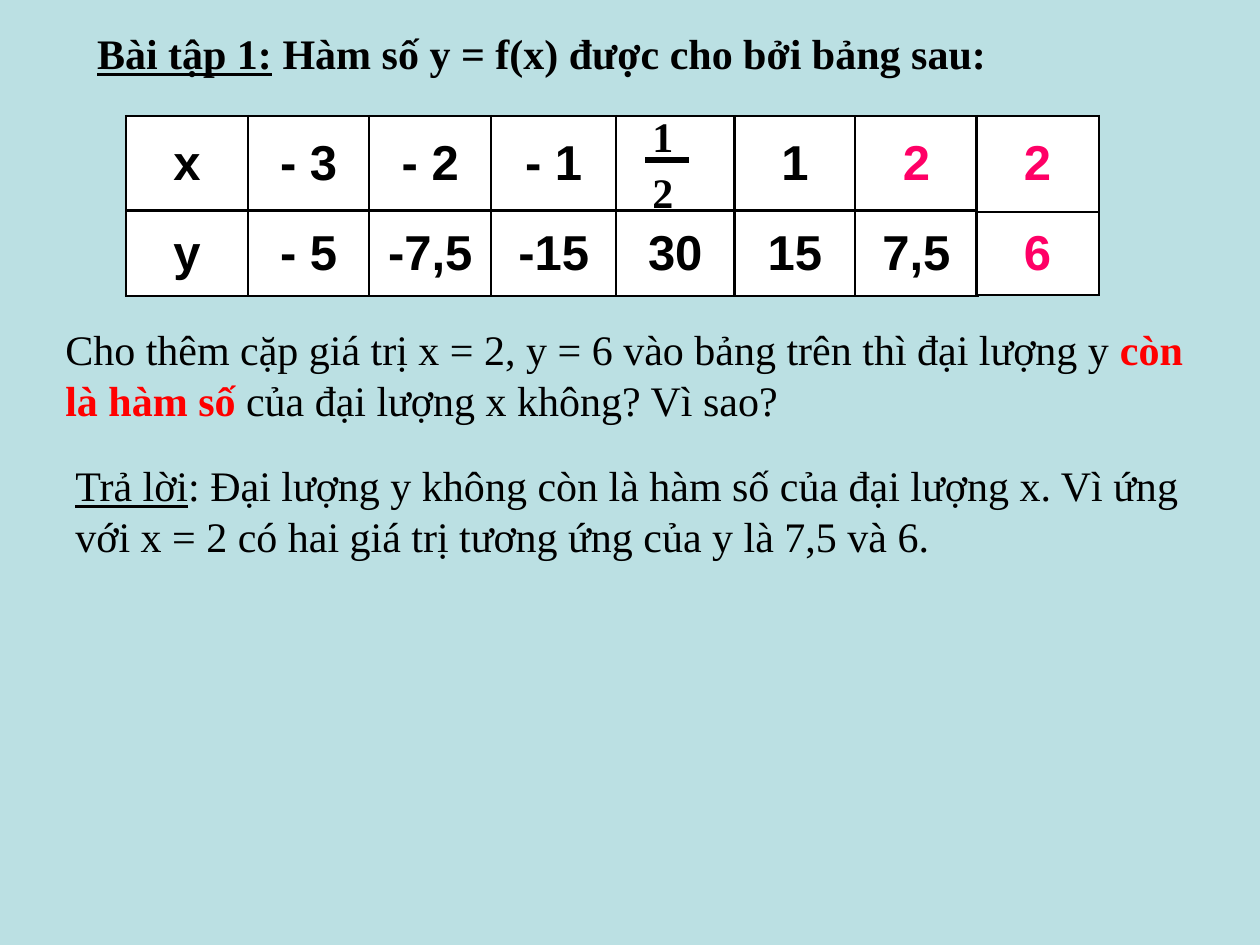
from lxml.etree import SubElement
from pptx import Presentation
from pptx.dml.color import RGBColor
from pptx.enum.shapes import MSO_CONNECTOR
from pptx.enum.text import MSO_ANCHOR, MSO_AUTO_SIZE as AutoSize, PP_ALIGN
from pptx.oxml.ns import qn
from pptx.util import Inches, Pt

COLORS = {
    "background": "BBE0E3",
    "ink": "000000",
    "cell": "FFFFFF",
    "pink": "FF0066",
    "red": "FF0000",
}


def rgb(name):
    return RGBColor.from_string(COLORS[name])


class SlideBuilder:
    text_font, table_font = "Times New Roman", "Arial"
    text_size, table_size = Pt(24), Pt(28)
    border = Pt(1.5)

    def __init__(self, slide):
        self.slide = slide
        slide.background.fill.solid()
        slide.background.fill.fore_color.rgb = rgb("background")

    def fill_text(self, shape, runs, bold=None):
        """Fill a shape with runs given as (text, style) pairs."""
        frame = shape.text_frame
        frame.word_wrap = True
        frame.auto_size = AutoSize.SHAPE_TO_FIT_TEXT
        frame.vertical_anchor = MSO_ANCHOR.TOP
        paragraph = frame.paragraphs[0]
        paragraph.alignment = PP_ALIGN.LEFT
        paragraph.font.name = self.text_font
        paragraph.font.size = self.text_size
        paragraph.font.bold = bold
        paragraph.font.color.rgb = rgb("ink")
        for text, style in runs:
            run = paragraph.add_run()
            run.text = text
            if style == "underline":
                run.font.underline = True
            if style == "red":
                run.font.bold = True
                run.font.color.rgb = rgb("red")
        return frame

    def title(self, left, top, width, height, runs):
        title = self.slide.shapes.title
        title.left, title.top = Inches(left), Inches(top)
        title.width, title.height = Inches(width), Inches(height)
        self.fill_text(title, runs, bold=True)

    def text(self, left, top, width, height, runs):
        box = self.slide.shapes.add_textbox(
            Inches(left), Inches(top), Inches(width), Inches(height))
        self.fill_text(box, runs)

    def fraction(self, left, top, numerator, denominator):
        group = self.slide.shapes.add_group_shape()
        for offset, digit in ((0, numerator), (0.44, denominator)):
            box = group.shapes.add_textbox(
                Inches(left), Inches(top + offset), Inches(0.37), Inches(0.51))
            self.fill_text(box, [(digit, "")], bold=True).word_wrap = False
        bar_y = Inches(top + 0.44)
        bar = group.shapes.add_connector(
            MSO_CONNECTOR.STRAIGHT,
            Inches(left + 0.04), bar_y, Inches(left + 0.39), bar_y)
        bar.line.color.rgb = rgb("ink")
        bar.line.width = Pt(3)
        SubElement(bar._element.spPr, qn("a:effectLst"))

    def table(self, left, top, widths, heights, rows, pink_cells):
        table = self.slide.shapes.add_table(
            len(heights), len(widths), Inches(left), Inches(top),
            Inches(sum(widths)), Inches(sum(heights))).table
        table.first_row = table.horz_banding = False
        for column, width in zip(table.columns, widths):
            column.width = Inches(width)
        for row, height in zip(table.rows, heights):
            row.height = Inches(height)
        for r, values in enumerate(rows):
            for c, value in enumerate(values):
                color = "pink" if (r, c) in pink_cells else "ink"
                self.cell(table.cell(r, c), value, color)

    def cell(self, cell, value, color):
        properties = cell._tc.get_or_add_tcPr()
        for side in ("lnL", "lnR", "lnT", "lnB"):
            line = SubElement(properties, qn(f"a:{side}"), w=str(self.border))
            fill = SubElement(line, qn("a:solidFill"))
            SubElement(fill, qn("a:srgbClr"), val=COLORS["ink"])
        cell.fill.solid()
        cell.fill.fore_color.rgb = rgb("cell")
        cell.vertical_anchor = MSO_ANCHOR.MIDDLE
        cell.text = value
        paragraph = cell.text_frame.paragraphs[0]
        paragraph.alignment = PP_ALIGN.CENTER
        paragraph.font.name = self.table_font
        paragraph.font.size = self.table_size
        paragraph.font.bold = True
        paragraph.font.color.rgb = rgb(color)


def main():
    deck = Presentation()
    deck.slide_width, deck.slide_height = Inches(10), Inches(7.5)
    builder = SlideBuilder(deck.slides.add_slide(deck.slide_layouts[5]))

    # Exercise heading
    builder.title(0.67, 0.17, 9, 0.5, [
        ("Bài tập 1:", "underline"),
        (" Hàm số y = f(x) được cho bởi bảng sau:", ""),
    ])

    # Function values, with x = 1/2 set as a stacked fraction
    builder.table(
        1, 0.92, [0.97, 0.96, 0.97, 0.99, 0.94, 0.96, 0.97], [0.75, 0.68],
        [["x", "- 3", "- 2", "- 1", "", "1", "2"],
         ["y", "- 5", "-7,5", "-15", "30", "15", "7,5"]],
        pink_cells={(0, 6)})
    builder.fraction(5.08, 0.83, "1", "2")

    # Question and answer
    builder.text(0.42, 2.52, 9.17, 0.91, [
        ("Cho thêm cặp giá trị x = 2, y = 6 vào bảng trên thì đại lượng y ", ""),
        ("còn là hàm số", "red"),
        (" của đại lượng x không? Vì sao?", ""),
    ])
    builder.text(0.5, 3.6, 9, 0.91, [
        ("Trả lời", "underline"),
        (": Đại lượng y không còn là hàm số của đại lượng x. Vì ứng với "
         "x = 2 có hai giá trị tương ứng của y là 7,5 và 6.", ""),
    ])

    # Added pair of values
    builder.table(7.75, 0.92, [0.97], [0.76, 0.66], [["2"], ["6"]],
                  pink_cells={(0, 0), (1, 0)})

    deck.save("out.pptx")


if __name__ == "__main__":
    main()
